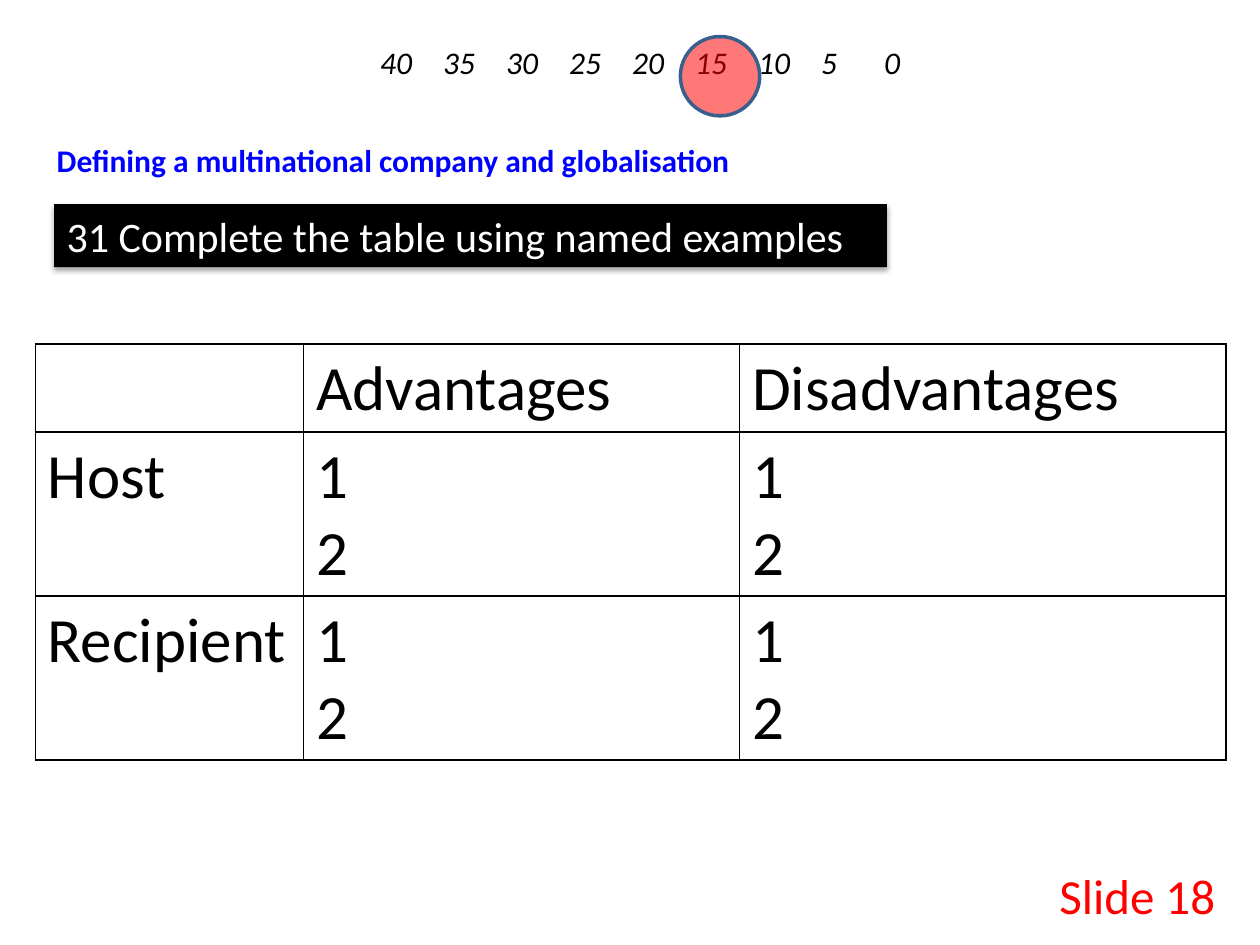
from lxml import etree
from pptx import Presentation
from pptx.dml.color import RGBColor
from pptx.enum import shapes, text
from pptx.oxml import parse_xml
from pptx.oxml.ns import nsdecls, qn
from pptx.util import Inches, Pt

FONT = "Calibri"
COLOURS = {
    "black": "000000",
    "white": "FFFFFF",
    "red": "FF0000",
    "blue": "0000FF",
    "marker_line": "3A5F8C",
}
SCALE = range(40, -1, -5)
COLUMN_WIDTHS = [2.13, 3.46, 3.86]
ROW_HEIGHTS = [0.7, 1.3, 1.3]
ROWS = [
    ["", "Advantages", "Disadvantages"],
    ["Host", "1\n2", "1\n2"],
    ["Recipient", "1\n2", "1\n2"],
]


def colour(name):
    return RGBColor.from_string(COLOURS[name])


def write(frame, content, size=18, ink="black", bold=False, italic=False,
          align=text.PP_ALIGN.LEFT):
    """Fill a text frame, one paragraph for each line of content."""
    frame.word_wrap = True
    for index, line in enumerate(content.split("\n")):
        paragraph = frame.add_paragraph() if index else frame.paragraphs[0]
        paragraph.alignment = align
        run = paragraph.add_run()
        run.text = line
        font = run.font
        font.name, font.size = FONT, Pt(size)
        font.bold, font.italic = bold, italic
        font.color.rgb = colour(ink)


def add_label(slide, box, content, **style):
    label = slide.shapes.add_textbox(*map(Inches, box))
    write(label.text_frame, content, **style)


def add_filled(slide, kind, box, fill):
    shape = slide.shapes.add_shape(kind, *map(Inches, box))
    shape.shadow.inherit = False
    shape.fill.solid()
    shape.fill.fore_color.rgb = colour(fill)
    shape.line.fill.background()
    return shape


def place_title(slide, box, content, **style):
    title = slide.shapes.title
    title.left, title.top, title.width, title.height = map(Inches, box)
    title.text_frame.auto_size = text.MSO_AUTO_SIZE.NONE
    title.text_frame.vertical_anchor = text.MSO_ANCHOR.TOP
    write(title.text_frame, content, **style)


def add_marker(slide, box):
    """Translucent circle on the countdown scale."""
    marker = add_filled(slide, shapes.MSO_SHAPE.OVAL, box, "red")
    marker.line.color.rgb = colour("marker_line")
    marker.line.width = Pt(2)
    tint = marker.fill._xPr.find(qn("a:solidFill"))[0]
    etree.SubElement(tint, qn("a:alpha")).set("val", "53000")


def add_task_bar(slide, box, content):
    bar = add_filled(slide, shapes.MSO_SHAPE.RECTANGLE, box, "black")
    write(bar.text_frame, content, size=24, ink="white")
    # Soft shadow below the bar
    effects = bar._element.spPr.find(qn("a:effectLst"))
    effects.append(parse_xml(
        f'<a:outerShdw {nsdecls("a")} blurRad="{Pt(3.1)}" dist="{Pt(1.8)}" '
        f'dir="5400000" rotWithShape="0"><a:srgbClr val="{COLOURS["black"]}">'
        '<a:alpha val="35000"/></a:srgbClr></a:outerShdw>'))


def add_borders(cell):
    properties = cell._tc.get_or_add_tcPr()
    for side in ("lnL", "lnR", "lnT", "lnB"):
        properties.append(parse_xml(
            f'<a:{side} {nsdecls("a")} w="{Pt(1)}"><a:solidFill>'
            f'<a:srgbClr val="{COLOURS["black"]}"/></a:solidFill></a:{side}>'))


def add_grid(slide, left, top):
    frame = slide.shapes.add_table(
        len(ROWS), len(COLUMN_WIDTHS), Inches(left), Inches(top),
        Inches(sum(COLUMN_WIDTHS)), Inches(sum(ROW_HEIGHTS)))
    table = frame.table
    table.first_row = table.horz_banding = False
    for column, width in zip(table.columns, COLUMN_WIDTHS):
        column.width = Inches(width)
    for row, height, contents in zip(table.rows, ROW_HEIGHTS, ROWS):
        row.height = Inches(height)
        for cell, content in zip(row.cells, contents):
            add_borders(cell)
            cell.fill.background()
            if content:
                write(cell.text_frame, content, size=36)


def main():
    presentation = Presentation()
    presentation.slide_width, presentation.slide_height = Inches(10), Inches(7.5)
    slide = presentation.slides.add_slide(presentation.slide_layouts[5])

    # Heading and slide number
    place_title(slide, (0.35, 1.07, 5.81, 0.4),
                "Defining a multinational company and globalisation",
                ink="blue", bold=True)
    add_label(slide, (8.31, 6.82, 1.59, 0.57), "Slide 18", size=28, ink="red")

    # Countdown scale with its marker
    add_label(slide, (0.67, 0.29, 8.82, 0.4), "\t".join(map(str, SCALE)),
              italic=True, align=text.PP_ALIGN.CENTER)
    add_marker(slide, (5.4, 0.29, 0.63, 0.63))

    # Task and the table to complete
    add_task_bar(slide, (0.43, 1.62, 6.61, 0.5),
                 "31 Complete the table using named examples")
    add_grid(slide, 0.28, 2.73)

    presentation.save("out.pptx")


if __name__ == "__main__":
    main()
